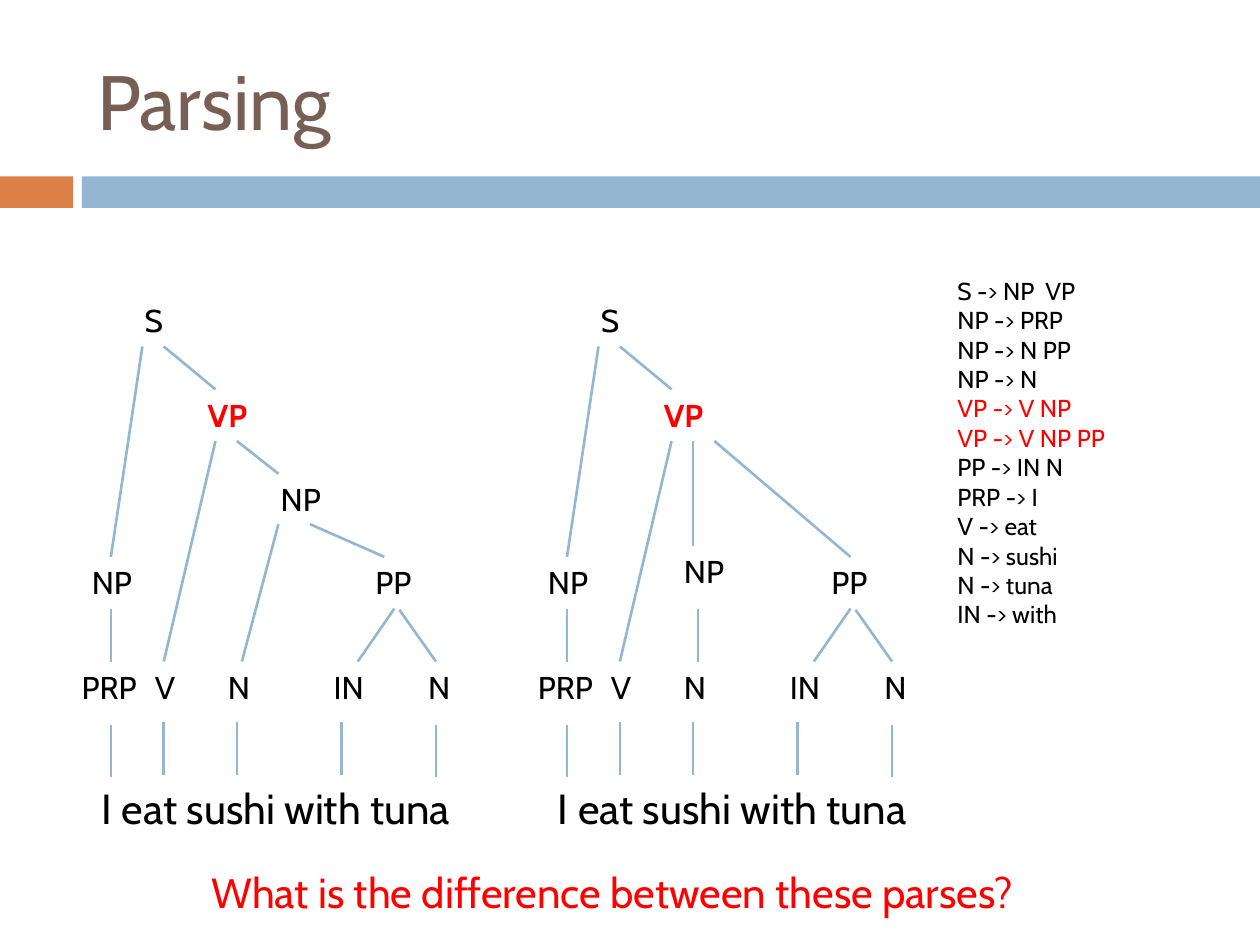
from lxml.etree import SubElement
from pptx import Presentation
from pptx.dml.color import RGBColor
from pptx.enum.shapes import MSO_CONNECTOR as Connector, MSO_SHAPE as Shape
from pptx.enum.text import MSO_ANCHOR as Anchor, MSO_AUTO_SIZE as AutoSize, PP_ALIGN as Align
from pptx.oxml.ns import qn
from pptx.util import Pt

PX = 9144  # EMU per px, 100 px to the inch
FONT = "Cabin"
COLORS = {
    "title": "775F55",
    "accent": "DD8047",
    "blue": "94B6D2",
    "text": "000000",
    "highlight": "FF0000",
}

# Tree geometry, in px from the left edge of the first tree's slide
TREE_SHIFT = 362
SENTENCE = "I eat sushi with tuna"
LEAF_TOP = 525
SHARED_NODES = [  # label, left, top, width
    ("S", 105, 234, 67),
    ("VP", 155, 309, 67),
    ("NP", 63, 442, 108),
    ("PP", 288, 442, 75),
    ("PRP", 55, LEAF_TOP, 92),
    ("V", 113, LEAF_TOP, 108),
    ("N", 171, LEAF_TOP, 42),
    ("IN", 255, LEAF_TOP, 58),
    ("N", 330, LEAF_TOP, 58),
]
SHARED_BRANCHES = [  # x1, y1, x2, y2
    (113, 275, 88, 442),   # S - NP
    (130, 275, 171, 309),  # S - VP
    (171, 350, 130, 525),  # VP - V
    (88, 483, 88, 525),    # NP - PRP
    (313, 483, 284, 525),  # PP - IN
    (317, 484, 346, 525),  # PP - N
]
WORD_LINES = [(88, 575), (130, 573), (188, 573), (271, 573), (346, 575)]  # x, top
WORD_LINE_HEIGHT = 42

# What sets the two parses apart: PP under the noun, or PP under the verb
NOUN_NODE = ("NP", 213, 376, 67)
NOUN_BRANCHES = [(188, 350, 221, 376), (221, 416, 192, 525), (246, 416, 305, 442)]
VERB_NODE = ("NP", 171, 433, 67)
VERB_BRANCHES = [(188, 350, 188, 433), (192, 483, 192, 525), (205, 350, 313, 442)]

RULES = [
    "S -> NP  VP", "NP -> PRP", "NP -> N PP", "NP -> N",
    "VP -> V NP", "VP -> V NP PP", "PP -> IN N", "PRP -> I",
    "V -> eat", "N -> sushi", "N -> tuna", "IN -> with",
]


def rgb(name):
    return RGBColor.from_string(COLORS[name])


def format_para(para, size, color, bold=False):
    for span in para.runs:
        span.font.name = FONT
        span.font.size = Pt(size)
        span.font.bold = bold
        span.font.color.rgb = rgb(color)


def set_title(slide, text):
    title = slide.shapes.title
    title.left, title.top, title.width, title.height = (n * PX for n in (67, 25, 892, 108))
    frame = title.text_frame
    frame.text = text
    frame.vertical_anchor = Anchor.MIDDLE
    frame.paragraphs[0].alignment = Align.LEFT
    format_para(frame.paragraphs[0], 44, "title")


def add_bar(slide, left, width, color):
    bar = slide.shapes.add_shape(Shape.RECTANGLE, left * PX, 140 * PX, width * PX, 25 * PX)
    bar.shadow.inherit = False
    bar.fill.solid()
    bar.fill.fore_color.rgb = rgb(color)
    bar.line.fill.background()


def add_text(slide, text, left, top, width, height, size, color="text", bold=False):
    box = slide.shapes.add_textbox(left * PX, top * PX, width * PX, height * PX)
    frame = box.text_frame
    frame.word_wrap = True
    frame.auto_size = AutoSize.SHAPE_TO_FIT_TEXT
    frame.text = text
    for para in frame.paragraphs:
        format_para(para, size, color, bold)
    return box


def add_branch(slide, x1, y1, x2, y2):
    branch = slide.shapes.add_connector(
        Connector.STRAIGHT, x1 * PX, y1 * PX, x2 * PX, y2 * PX)
    branch.line.color.rgb = rgb("blue")
    branch.line.width = Pt(1.5)
    SubElement(branch.element.spPr, qn("a:effectLst"))


def add_tree(slide, shift, own_node, own_branches):
    for label, left, top, width in SHARED_NODES + [own_node]:
        is_verb_phrase = label == "VP"
        color = "highlight" if is_verb_phrase else "text"
        add_text(slide, label, left + shift, top, width, 40, 18, color, is_verb_phrase)
    word_lines = [(x, top, x, top + WORD_LINE_HEIGHT) for x, top in WORD_LINES]
    for x1, y1, x2, y2 in SHARED_BRANCHES + own_branches + word_lines:
        add_branch(slide, x1 + shift, y1, x2 + shift, y2)
    add_text(slide, SENTENCE, 71 + shift, 616, 408, 50, 24)


def add_grammar(slide):
    box = add_text(slide, "\n".join(RULES), 750, 214, 229, 293, 14)
    for para in box.text_frame.paragraphs:
        if para.text.startswith("VP"):
            format_para(para, 14, "highlight")


def main():
    deck = Presentation()
    deck.slide_width, deck.slide_height = 1000 * PX, 750 * PX
    page = deck.slides.add_slide(deck.slide_layouts[5])  # title only

    # Heading and its band
    set_title(page, "Parsing")
    add_bar(page, 0, 58, "accent")
    add_bar(page, 65, 935, "blue")

    # The two parses, the grammar and the question
    add_tree(page, 0, NOUN_NODE, NOUN_BRANCHES)
    add_tree(page, TREE_SHIFT, VERB_NODE, VERB_BRANCHES)
    add_grammar(page)
    add_text(page, "What is the difference between these parses?",
             158, 683, 670, 50, 24, "highlight")

    deck.save("out.pptx")


if __name__ == "__main__":
    main()
